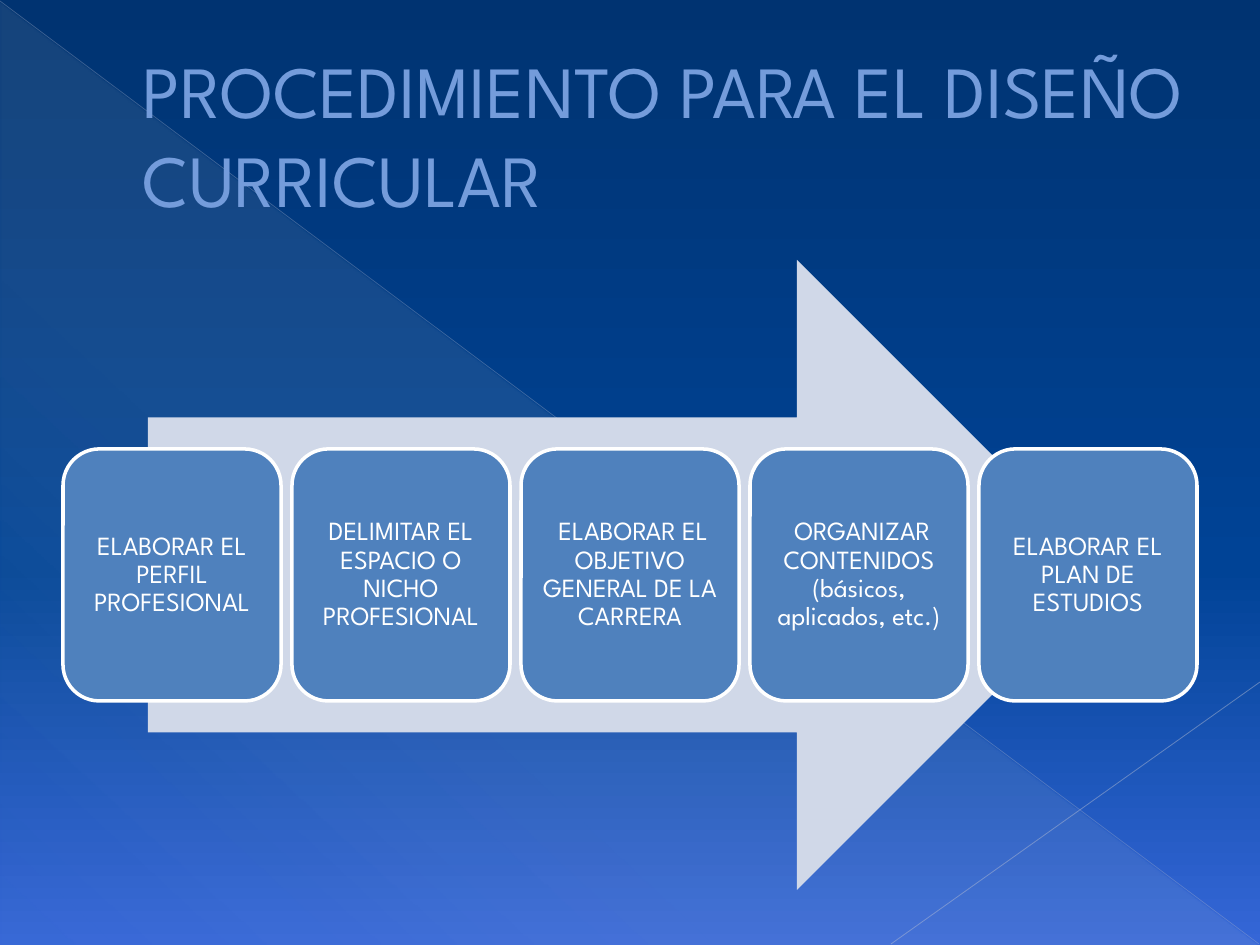
from dataclasses import dataclass

from pptx import Presentation
from pptx import util as u
from pptx.dml.color import RGBColor
from pptx.enum import shapes, text
from pptx.oxml import ns, parse_xml

SCALE = 914400 / 126
FONT = "League Spartan"
NS = ns.nsdecls("a")


@dataclass(frozen=True)
class Stop:
    position: int
    color: str
    opacity: int = 100


@dataclass(frozen=True)
class Line:
    start: tuple[int, int]
    end: tuple[int, int]
    color: str
    width: float
    opacity: int


@dataclass(frozen=True)
class Box:
    left: int
    top: int
    width: int
    height: int

    def emu(self) -> list[int]:
        return [px(n) for n in (self.left, self.top, self.width, self.height)]


BACKGROUND = [Stop(0, "003371"), Stop(60, "004396"), Stop(100, "3566D7")]
SHEEN = [Stop(0, "EEECE1", 10), Stop(70, "EEECE1", 8), Stop(100, "EEECE1", 1)]
LINES = [
    Line((0, 1), (1259, 944), "ADB6CE", 0.39, 35),
    Line((1260, 682), (891, 944), "B6BED3", 0.47, 45),
]
TITLE = "PROCEDIMIENTO PARA EL DISEÑO CURRICULAR"
STEPS = [
    "ELABORAR EL PERFIL PROFESIONAL",
    "DELIMITAR EL ESPACIO O NICHO PROFESIONAL",
    " ELABORAR EL OBJETIVO GENERAL DE LA CARRERA",
    " ORGANIZAR CONTENIDOS (básicos, aplicados, etc.)",
    "ELABORAR EL PLAN DE ESTUDIOS",
]
FIRST_CARD = Box(63, 449, 218, 252)
CARD_PITCH = 229


def px(length: int) -> int:
    return round(length * SCALE)


def rgb(color: str) -> RGBColor:
    return RGBColor.from_string(color)


def set_gradient(fill, element, stops: list[Stop], angle: int) -> None:
    fill.gradient()
    fill.gradient_angle = 360 - angle
    stop_list = next(element.iter(ns.qn("a:gsLst")))
    for old in list(stop_list):
        stop_list.remove(old)
    for stop in stops:
        stop_list.append(parse_xml(
            f'<a:gs {NS} pos="{stop.position * 1000}"><a:srgbClr val="{stop.color}">'
            f'<a:alpha val="{stop.opacity * 1000}"/></a:srgbClr></a:gs>'))


def add_plain_shape(page, kind, box: Box):
    shape = page.shapes.add_shape(kind, *box.emu())
    shape.shadow.inherit = False
    shape.line.fill.background()
    return shape


def add_filled_shape(page, kind, box: Box, color: str):
    shape = add_plain_shape(page, kind, box)
    shape.fill.solid()
    shape.fill.fore_color.rgb = rgb(color)
    return shape


def add_line(page, line: Line) -> None:
    ends = [px(n) for n in line.start + line.end]
    connector = page.shapes.add_connector(shapes.MSO_CONNECTOR.STRAIGHT, *ends)
    connector.line.color.rgb = rgb(line.color)
    connector.line.width = u.Pt(line.width)
    color = next(connector.element.iter(ns.qn("a:srgbClr")))
    color.append(parse_xml(f'<a:alpha {NS} val="{line.opacity * 1000}"/>'))
    connector.element.spPr.append(parse_xml(f"<a:effectLst {NS}/>"))


def write_text(shape, words: str, size: int, color: str, align):
    frame = shape.text_frame
    frame.text = words
    frame.word_wrap = True
    frame.vertical_anchor = text.MSO_ANCHOR.MIDDLE
    para = frame.paragraphs[0]
    para.alignment = align
    span = para.runs[0]
    span.font.name = FONT
    span.font.size = u.Pt(size)
    span.font.color.rgb = rgb(color)
    return para


def add_title(page, box: Box) -> None:
    title = page.shapes.add_textbox(*box.emu())
    para = write_text(title, TITLE, 42, "749CDB", text.PP_ALIGN.LEFT)
    title.text_frame.margin_left = px(80)
    properties = next(para.runs[0].font.fill and title.element.iter(ns.qn("a:rPr")))
    properties.insert(0, parse_xml(
        f'<a:ln {NS} w="6350"><a:solidFill><a:srgbClr val="375983"/></a:solidFill></a:ln>'))


def add_card(page, box: Box, words: str) -> None:
    card = add_filled_shape(page, shapes.MSO_SHAPE.ROUNDED_RECTANGLE, box, "4F81BD")
    card.line.color.rgb = rgb("FFFFFF")
    card.line.width = u.Pt(2)
    para = write_text(card, words, 15, "FFFFFF", text.PP_ALIGN.CENTER)
    para.line_spacing = 0.9
    frame = card.text_frame
    frame.margin_left = frame.margin_right = px(8)
    frame.margin_top = frame.margin_bottom = px(8)


def main() -> None:
    deck = Presentation()
    deck.slide_width, deck.slide_height = px(1260), px(945)
    page = deck.slides.add_slide(deck.slide_layouts[6])
    set_gradient(page.background.fill, page.element, BACKGROUND, 90)

    sheen = add_plain_shape(page, shapes.MSO_SHAPE.RIGHT_TRIANGLE, Box(1, 3, 1257, 942))
    set_gradient(sheen.fill, sheen.element, SHEEN, 133)
    for line in LINES:
        add_line(page, line)

    add_title(page, Box(63, 37, 1134, 193))
    add_filled_shape(page, shapes.MSO_SHAPE.RIGHT_ARROW, Box(148, 260, 964, 630), "D0D8E8")
    for index, words in enumerate(STEPS):
        left = FIRST_CARD.left + index * CARD_PITCH
        add_card(page, Box(left, FIRST_CARD.top, FIRST_CARD.width, FIRST_CARD.height), words)

    deck.save("out.pptx")


if __name__ == "__main__":
    main()
